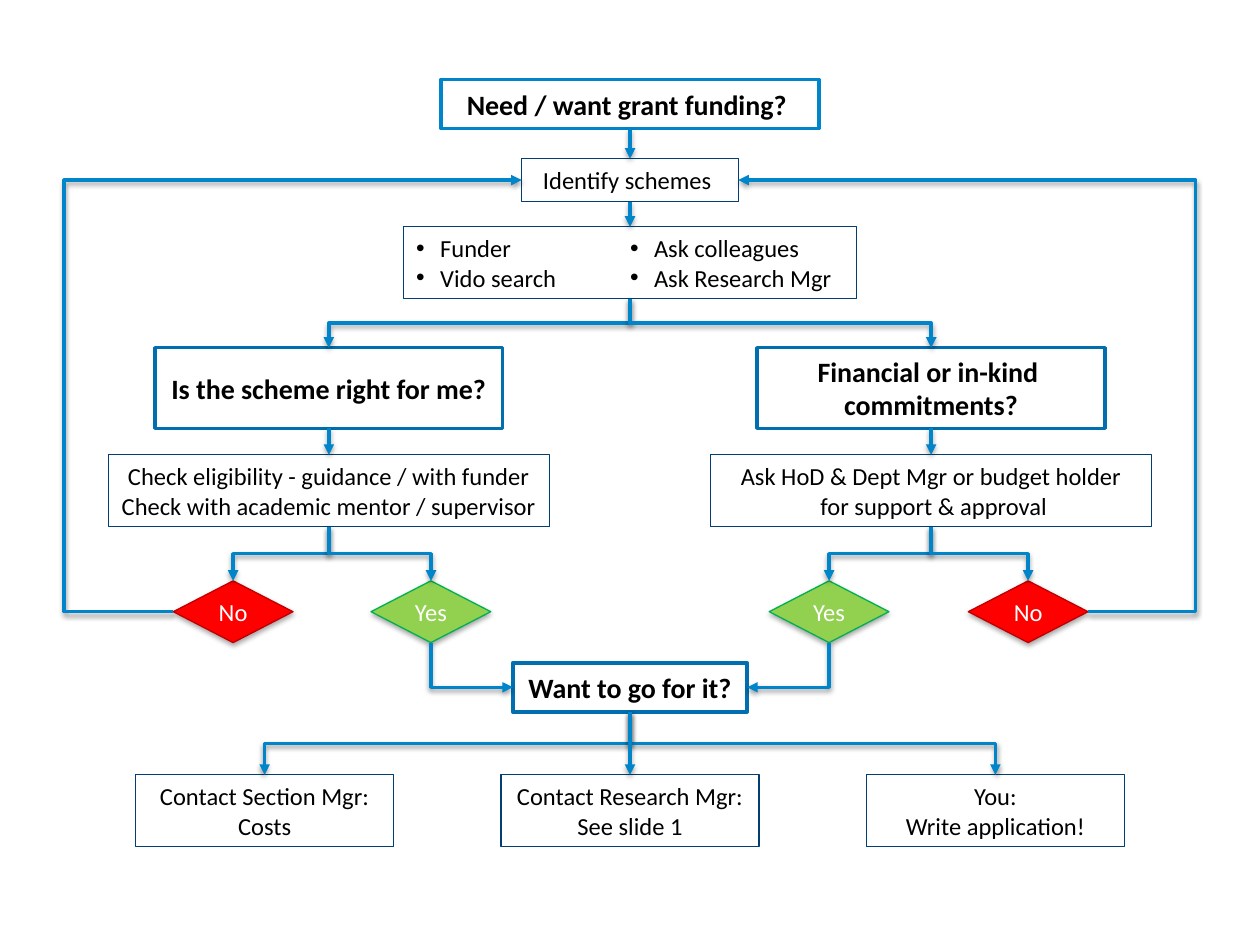
import pptx
import pptx.util
import pptx.dml.color
import pptx.enum.shapes
import pptx.enum.text
import pptx.oxml
import pptx.oxml.ns

Inches, Pt = pptx.util.Inches, pptx.util.Pt
RGBColor = pptx.dml.color.RGBColor
Shape = pptx.enum.shapes.MSO_SHAPE
Line = pptx.enum.shapes.MSO_CONNECTOR
Align = pptx.enum.text.PP_ALIGN
Anchor = pptx.enum.text.MSO_ANCHOR
qn = pptx.oxml.ns.qn

BLUE = RGBColor(0x00, 0x85, 0xCA)
DEEP = RGBColor(0x00, 0x6E, 0xAF)
NAVY = RGBColor(0x00, 0x3E, 0x74)
BLACK = RGBColor(0, 0, 0)
WHITE = RGBColor(255, 255, 255)
RED = RGBColor(255, 0, 0)
MAROON = RGBColor(0xC0, 0, 0)
LIME = RGBColor(0x92, 0xD0, 0x50)
GREEN = RGBColor(0x00, 0xB0, 0x50)

# fill, line, line width, text colour, text size, bold, preset
HEAD = (WHITE, BLUE, 2, BLACK, 16, True, Shape.RECTANGLE)
ASK = (WHITE, DEEP, 2, BLACK, 16, True, Shape.RECTANGLE)
STEP = (None, NAVY, 0.75, BLACK, 14, False, Shape.RECTANGLE)
YES = (LIME, GREEN, 0.75, WHITE, 14, False, Shape.FLOWCHART_DECISION)
NO = (RED, MAROON, 0.75, WHITE, 14, False, Shape.FLOWCHART_DECISION)

# name: (style, centre x, top, width, height, lines)
BOXES = {
    "need": (HEAD, 5, 0.63, 3, 0.39, ["Need / want grant funding? "]),
    "right": (ASK, 2.61, 2.76, 2.76, 0.64, ["Is the scheme right for me?"]),
    "money": (ASK, 7.39, 2.76, 2.76, 0.64,
              ["Financial or in-kind ", "commitments?"]),
    "check": (STEP, 2.61, 3.61, 3.5, 0.57,
              ["Check eligibility - guidance / with funder",
               "Check with academic mentor / supervisor"]),
    "dept": (STEP, 7.39, 3.61, 3.5, 0.57,
             ["Ask HoD & Dept Mgr or budget holder",
              " for support & approval"]),
    "schemes": (STEP, 5, 1.26, 1.72, 0.34, ["Identify schemes "]),
    "search": (STEP, 5, 1.8, 3.59, 0.57,
               ["Funder", "Vido search", "Ask colleagues", "Ask Research Mgr"]),
    "go": (ASK, 5, 5.26, 1.86, 0.39, ["Want to go for it?"]),
    "costs": (STEP, 2.1, 6.15, 2.05, 0.57, ["Contact Section Mgr:", "Costs"]),
    "mgr": (STEP, 5, 6.15, 2.05, 0.57, ["Contact Research Mgr:", "See slide 1"]),
    "you": (STEP, 7.9, 6.15, 2.05, 0.57, ["You:", "Write application!"]),
    "yes1": (YES, 3.42, 4.61, 0.95, 0.49, ["Yes"]),
    "yes2": (YES, 6.58, 4.61, 0.95, 0.49, ["Yes"]),
    "no2": (NO, 8.16, 4.61, 0.95, 0.49, ["No"]),
    "no1": (NO, 1.85, 4.61, 0.95, 0.49, ["No"]),
}
LISTS = {"search"}
DOWN = [("need", "schemes"), ("schemes", "search"), ("right", "check"),
        ("money", "dept"), ("check", "no1"), ("check", "yes1"),
        ("dept", "yes2"), ("dept", "no2"), ("search", "right"),
        ("search", "money"), ("go", "costs"), ("go", "you"), ("go", "mgr")]
INTO = [("yes1", "go"), ("yes2", "go")]
BACK = [("no1", "schemes", 0.51), ("no2", "schemes", 9.49)]


def node(tag, host, **values):
    """Append an a: element with attributes to host."""
    item = pptx.oxml.parse_xml(f"<a:{tag} {pptx.oxml.ns.nsdecls('a')}/>")
    for key, value in values.items():
        item.set(key, str(value))
    host.append(item)
    return item


def shade(shape, dist, alpha):
    fx = node("effectLst", shape._element.spPr)
    drop = node("outerShdw", fx, blurRad=Pt(3.1), dist=Pt(dist),
                dir=5400000, rotWithShape=0)
    node("alpha", node("srgbClr", drop, val="000000"), val=alpha * 1000)


def mid(name):
    _, x, top, _, high, _ = BOXES[name]
    return x, top + high / 2


def foot(name):
    _, x, top, _, high, _ = BOXES[name]
    return x, top + high


def side(name, x):
    """Middle of the left or right edge that faces x."""
    centre, y = mid(name)
    half = BOXES[name][3] / 2
    return centre + (half if x > centre else -half), y


def draw(slide, name):
    style, x, top, wide, high, lines = BOXES[name]
    fill, edge, weight, ink, size, bold, preset = style
    box = slide.shapes.add_shape(preset, Inches(x - wide / 2), Inches(top),
                                 Inches(wide), Inches(high))
    box.shadow.inherit = False
    if fill is None:
        box.fill.background()
    else:
        box.fill.solid()
        box.fill.fore_color.rgb = fill
    box.line.color.rgb = edge
    box.line.width = Pt(weight)
    frame = box.text_frame
    frame.word_wrap = True
    frame.vertical_anchor = Anchor.MIDDLE
    if preset == Shape.FLOWCHART_DECISION:
        box._element.spPr.remove(box._element.spPr.find(qn("a:effectLst")))
        shade(box, 1.8, 35)
        frame.margin_left = frame.margin_right = 0
    if name in LISTS:
        frame._txBody.bodyPr.set("numCol", "2")
    for i, line in enumerate(lines):
        para = frame.paragraphs[0] if i == 0 else frame.add_paragraph()
        para.alignment = Align.LEFT if name in LISTS else Align.CENTER
        if name in LISTS:
            props = para._p.get_or_add_pPr()
            props.set("marL", str(Inches(0.19)))
            props.set("indent", str(Inches(-0.19)))
            node("buFont", props, typeface="Arial")
            node("buChar", props, char="•")
        run = para.add_run()
        run.text = line
        look = {"name": "Calibri", "size": Pt(size), "bold": bold}
        for key, value in look.items():
            setattr(run.font, key, value)
        run.font.color.rgb = ink


def arrow(slide, kind, start, end):
    ends = [Inches(v) for v in (*start, *end)]
    link = slide.shapes.add_connector(kind, *ends)
    link.line.color.rgb = BLUE
    link.line.width = Pt(2)
    node("tailEnd", link.line._get_or_add_ln(), type="triangle")
    shade(link, 1.6, 38)
    return link


def drop(slide, start, end):
    """Elbow that leaves downwards: a sideways elbow turned by a quarter."""
    (x1, y1), (x2, y2) = start, end
    x, y = (x1 + x2) / 2, (y1 + y2) / 2
    wide, high = (y2 - y1) / 2, abs(x2 - x1) / 2
    turn = 90
    if x2 > x1:
        wide, turn = -wide, 270
    link = arrow(slide, Line.ELBOW, (x - wide, y - high), (x + wide, y + high))
    link._element.spPr.find(qn("a:xfrm")).set("rot", str(turn * 60000))
    return link


def main():
    deck = pptx.Presentation()
    deck.slide_width, deck.slide_height = Inches(10), Inches(7.5)
    slide = deck.slides.add_slide(deck.slide_layouts[6])
    for name in BOXES:
        draw(slide, name)
    for a, b in DOWN:
        start, end = foot(a), (BOXES[b][1], BOXES[b][2])
        if start[0] == end[0]:
            arrow(slide, Line.STRAIGHT, start, end)
        else:
            drop(slide, start, end)
    for a, b in INTO:
        link = drop(slide, foot(a), side(b, BOXES[a][1]))
        link._element.spPr.find(qn("a:prstGeom")).set("prst", "bentConnector2")
    for a, b, lane in BACK:
        start, end = side(a, lane), side(b, lane)
        link = arrow(slide, Line.ELBOW, start, end)
        bend = round((lane - start[0]) / (end[0] - start[0]) * 100000)
        guide = link._element.spPr.find(qn("a:prstGeom")).find(qn("a:avLst"))
        node("gd", guide, name="adj1", fmla=f"val {bend}")
    deck.save("out.pptx")


if __name__ == "__main__":
    main()
